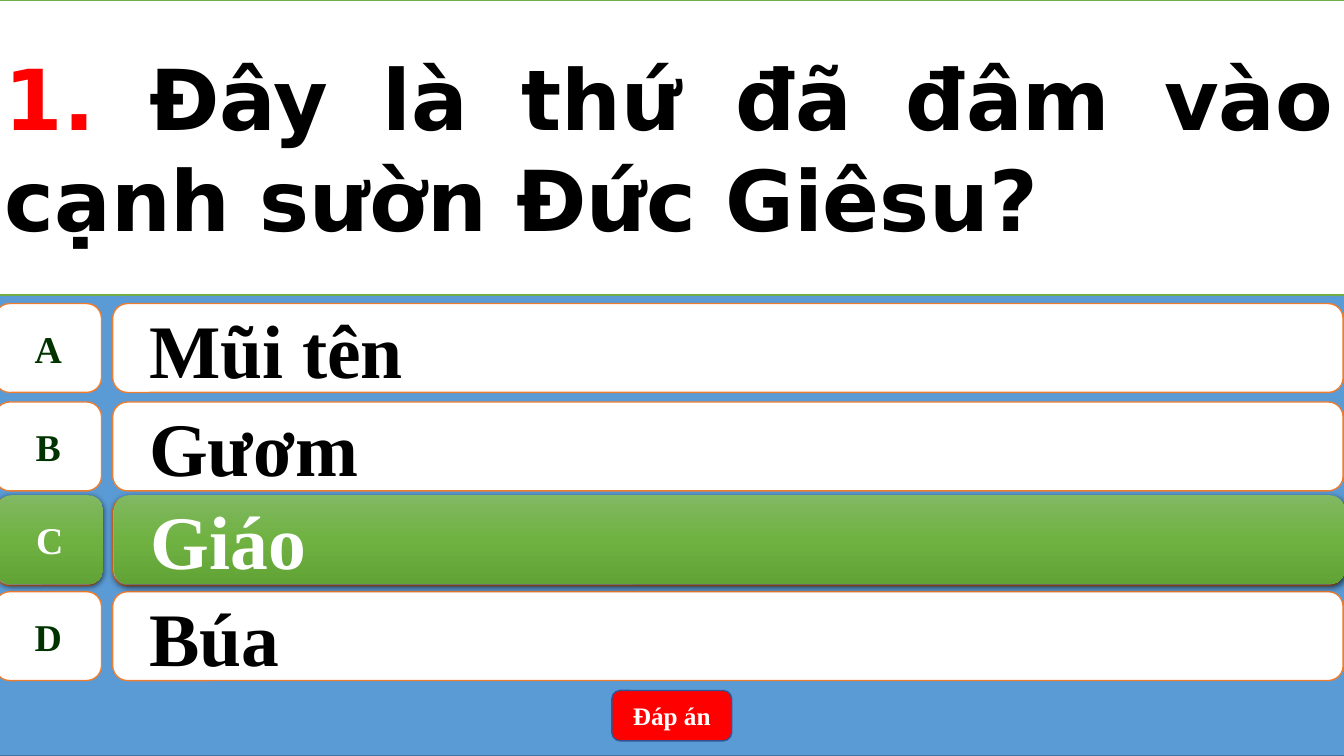
"""Build a quiz slide with one question, four answers and the right one lit."""
from copy import deepcopy
from dataclasses import dataclass

from lxml.etree import SubElement
from pptx import Presentation
from pptx.dml.color import RGBColor
from pptx.enum.shapes import MSO_SHAPE
from pptx.enum.text import MSO_ANCHOR, PP_ALIGN
from pptx.oxml.ns import qn
from pptx.util import Cm, Pt


@dataclass(frozen=True)
class Theme:
    """Colours, fonts and type sizes."""
    backdrop: str = "5B9BD5"
    backdrop_line: str = "43739E"
    white: str = "FFFFFF"
    black: str = "000000"
    red: str = "FF0000"
    letter: str = "003300"
    orange: str = "ED7D31"
    green_line: str = "70AD47"
    button_line: str = "325491"
    highlight: tuple = ("81B861", "6FB242", "62A336")
    serif: str = "Times New Roman"
    sans: str = "DejaVu Sans"
    question_size: int = 60
    answer_size: int = 54
    letter_size: int = 27
    button_size: int = 18


def add_text(paragraph, text, *, font, size, colour):
    """Add a bold run to a paragraph."""
    run = paragraph.add_run()
    run.text = text
    run.font.name = font
    run.font.size = Pt(size)
    run.font.bold = True
    run.font.color.rgb = RGBColor.from_string(colour)


class QuizSlide:
    """Draw the parts of a quiz on one slide."""

    LEFT, FULL_WIDTH = -0.13, 34.01
    ANSWER_LEFT, ANSWER_WIDTH = 2.84, 31.01
    LETTER_WIDTH, ROW_HEIGHT = 2.69, 2.24

    def __init__(self, slide, theme):
        """Keep the slide and its style."""
        self.slide = slide
        self.theme = theme

    def box(self, kind, left, top, width, height, fill=None, line=None):
        """Add a plain shape with middle-anchored, wrapping text."""
        shape = self.slide.shapes.add_shape(kind, Cm(left), Cm(top), Cm(width), Cm(height))
        shape.shadow.inherit = False
        if fill:
            shape.fill.solid()
            shape.fill.fore_color.rgb = RGBColor.from_string(fill)
        if line:
            shape.line.color.rgb = RGBColor.from_string(line)
            shape.line.width = Pt(1)
        else:
            shape.line.fill.background()
        shape.text_frame.word_wrap = True
        shape.text_frame.vertical_anchor = MSO_ANCHOR.MIDDLE
        return shape

    def backdrop(self):
        """Fill the whole slide with blue."""
        self.box(MSO_SHAPE.RECTANGLE, self.LEFT, 0, self.FULL_WIDTH, 19.05,
                 self.theme.backdrop, self.theme.backdrop_line)

    def question(self, number, text):
        """Add the question panel across the top."""
        theme = self.theme
        panel = self.box(MSO_SHAPE.RECTANGLE, self.LEFT, 0, self.FULL_WIDTH, 7.44,
                         theme.white, theme.green_line)
        paragraph = panel.text_frame.paragraphs[0]
        paragraph.alignment = PP_ALIGN.JUSTIFY
        for words, colour in ((f"{number}. ", theme.red), (text, theme.black)):
            add_text(paragraph, words, font=theme.sans, size=theme.question_size, colour=colour)

    def answer(self, letter, text, top, lit=False):
        """Add a letter tile and its answer bar, lit green if asked."""
        theme = self.theme
        shift = 0.04 if lit else 0
        fill, line = (None, None) if lit else (theme.white, theme.orange)
        tile = self.box(MSO_SHAPE.FLOWCHART_ALTERNATE_PROCESS, self.LEFT + shift, top,
                        self.LETTER_WIDTH, self.ROW_HEIGHT, fill, line)
        tile.text_frame.word_wrap = False
        paragraph = tile.text_frame.paragraphs[0]
        paragraph.alignment = PP_ALIGN.CENTER
        add_text(paragraph, letter, font=theme.serif, size=theme.letter_size,
                 colour=theme.white if lit else theme.letter)

        bar = self.box(MSO_SHAPE.ROUNDED_RECTANGLE, self.ANSWER_LEFT + shift, top,
                       self.ANSWER_WIDTH, self.ROW_HEIGHT, fill, line)
        paragraph = bar.text_frame.paragraphs[0]
        paragraph.alignment = PP_ALIGN.LEFT
        paragraph.level = 1
        properties = paragraph._p.get_or_add_pPr()
        properties.set("marL", str(Cm(1.27)))
        properties.set("indent", str(Cm(-0.71)))
        add_text(paragraph, text, font=theme.serif, size=theme.answer_size,
                 colour=theme.white if lit else theme.black)
        if lit:
            for shape in (tile, bar):
                self.light(shape)

    def light(self, shape):
        """Give a shape the green gradient and a soft shadow."""
        shape.fill.gradient()
        shape.fill.gradient_angle = 270
        stop_list = shape._element.spPr.find(f".//{qn('a:gsLst')}")
        stop_list.insert(1, deepcopy(stop_list[0]))
        colours = self.theme.highlight
        for stop, position, colour in zip(shape.fill.gradient_stops, (0, 0.5, 1), colours):
            stop.position = position
            stop.color.rgb = RGBColor.from_string(colour)
        effects = shape._element.spPr.find(qn("a:effectLst"))
        shadow = SubElement(effects, qn("a:outerShdw"), blurRad=str(Pt(4.5)),
                            dist=str(Pt(1.5)), dir="5400000", algn="ctr", rotWithShape="0")
        colour = SubElement(shadow, qn("a:srgbClr"), val=self.theme.black)
        SubElement(colour, qn("a:alpha"), val="63000")

    def button(self, text):
        """Add the red button at the bottom."""
        theme = self.theme
        shape = self.box(MSO_SHAPE.ROUNDED_RECTANGLE, 15.42, 17.4, 3.02, 1.27,
                         theme.red, theme.button_line)
        paragraph = shape.text_frame.paragraphs[0]
        paragraph.alignment = PP_ALIGN.CENTER
        add_text(paragraph, text, font=theme.serif, size=theme.button_size, colour=theme.white)


def main():
    """Build and save the presentation."""
    presentation = Presentation()
    presentation.slide_width, presentation.slide_height = Cm(33.87), Cm(19.05)
    slide = presentation.slides.add_slide(presentation.slide_layouts[6])
    quiz = QuizSlide(slide, Theme())
    quiz.backdrop()
    answers = (("A", "Mũi tên", 7.65), ("B", "Gươm", 10.13),
               ("C", "Giáo", 12.52), ("D", "Búa", 14.91))
    for letter, text, top in answers:
        quiz.answer(letter, text, top)
    quiz.button("Đáp án")
    quiz.answer("C", "Giáo", 12.48, lit=True)
    quiz.question(1, "Đây là thứ đã đâm vào cạnh sườn Đức Giêsu?")
    presentation.save("out.pptx")


if __name__ == "__main__":
    main()
